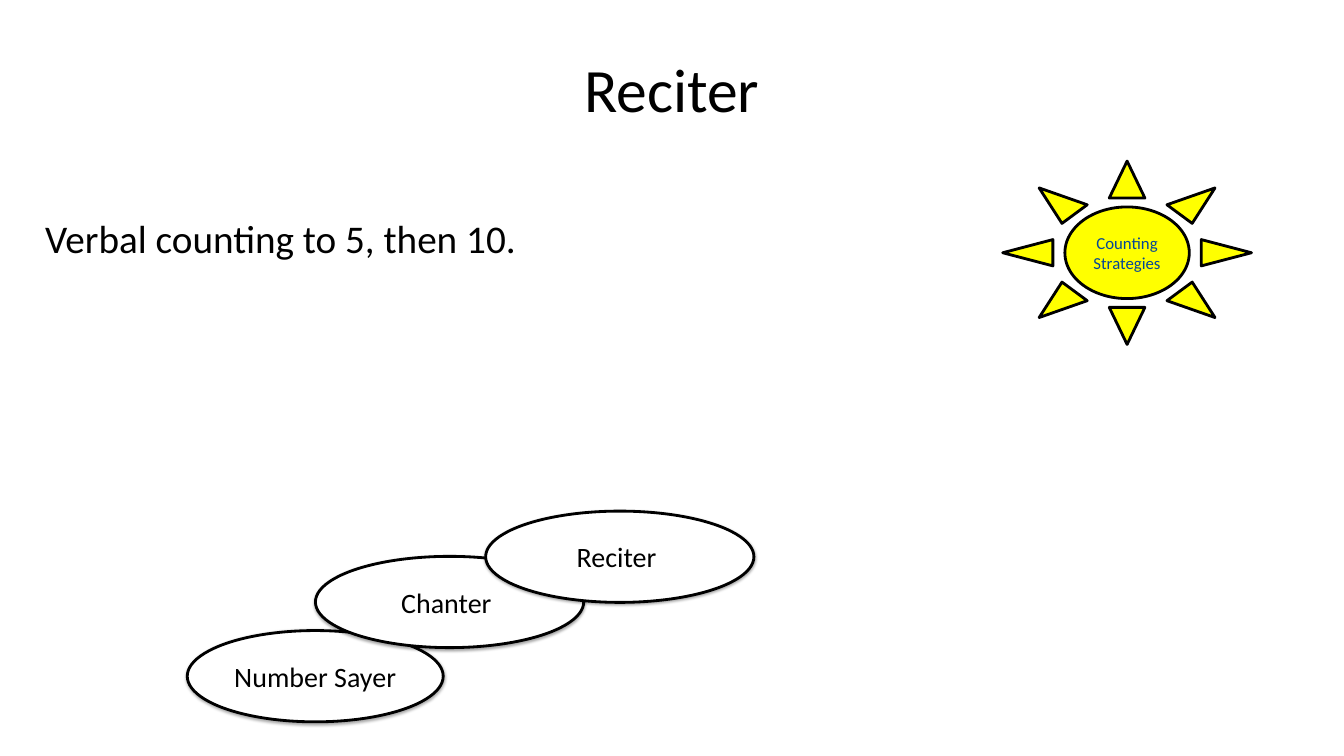
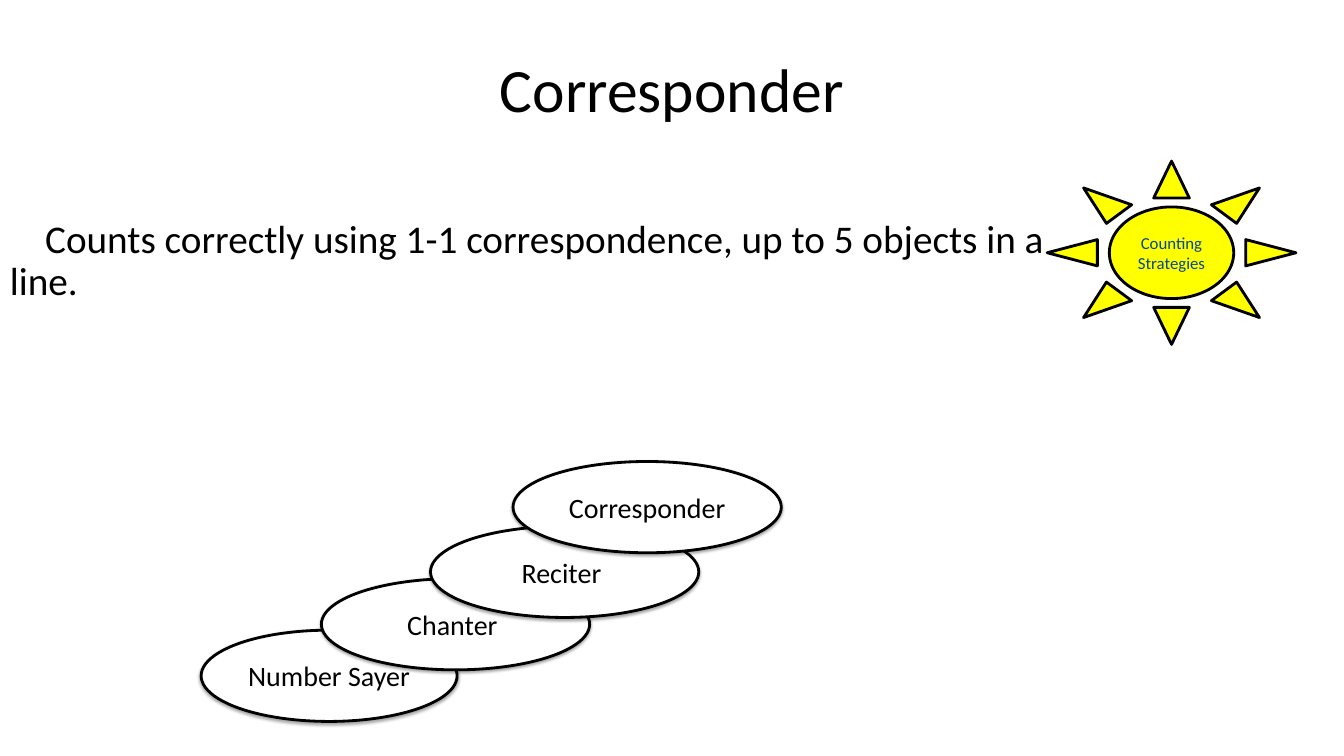
from lxml import etree
from pptx import Presentation
from pptx import util as u
from pptx.dml.color import RGBColor
from pptx.enum import shapes, text
from pptx.oxml.ns import qn

COLOURS = {"ink": "000000", "paper": "FFFFFF", "sun": "FFFF00", "label": "054697"}
FONT = "Calibri"

# Text styles shared by the slides
TITLE = {"size": 44, "colour": "ink", "spacing": 0.9, "inset": 0.25,
         "frame": {"word_wrap": True, "vertical_anchor": text.MSO_ANCHOR.MIDDLE},
         "align": text.PP_ALIGN.CENTER}
BODY = {**TITLE, "size": 28, "align": text.PP_ALIGN.LEFT, "indent": 0.89,
        "frame": {"word_wrap": True, "vertical_anchor": text.MSO_ANCHOR.TOP}}
STAGE = {**TITLE, "size": 20, "spacing": 1.0, "inset": 0.1,
         "frame": {"word_wrap": False, "vertical_anchor": text.MSO_ANCHOR.MIDDLE}}
SUN = {**STAGE, "size": 12, "colour": "label"}

# Per slide: title, body, left edge of the sun, and (name, left, top, width) of each stage
SLIDES = [
    ("Reciter", "Verbal counting to 5, then 10.", 25.27, [
        ("Number Sayer", 4.72, 15.89, 6.45),
        ("Chanter ", 7.95, 14.02, 6.76),
        ("Reciter ", 12.24, 12.88, 6.76)]),
    ("Corresponder",
     "Counts correctly using 1-1 correspondence, up to 5 objects in a line.", 26.39, [
        ("Number Sayer", 5.07, 15.88, 6.45),
        ("Chanter ", 8.1, 14.58, 6.76),
        ("Reciter ", 10.85, 13.26, 6.76),
        ("Corresponder", 12.93, 11.63, 6.76)]),
]


def write(box, lines, style):
    frame = box.text_frame
    for name, value in style["frame"].items():
        setattr(frame, name, value)
    for side in ("left", "right", "top", "bottom"):
        inset = style["inset"] / 2 if side in ("top", "bottom") else style["inset"]
        setattr(frame, f"margin_{side}", u.Cm(inset))
    for number, line in enumerate(lines):
        para = frame.paragraphs[0] if number == 0 else frame.add_paragraph()
        para.alignment = style["align"]
        para.line_spacing = style["spacing"]
        if "indent" in style:
            para._p.get_or_add_pPr().set("indent", str(u.Cm(style["indent"])))
        span = para.add_run()
        span.text = line
        for name, value in {"name": FONT, "size": u.Pt(style["size"])}.items():
            setattr(span.font, name, value)
        span.font.color.rgb = RGBColor.from_string(COLOURS[style["colour"]])


def add_figure(page, kind, place, fill):
    figure = page.shapes.add_shape(kind, *map(u.Cm, place))
    figure.shadow.inherit = False
    figure.fill.solid()
    figure.fill.fore_color.rgb = RGBColor.from_string(COLOURS[fill])
    figure.line.color.rgb = RGBColor.from_string(COLOURS["ink"])
    figure.line.width = u.Pt(2)
    return figure


deck = Presentation()
deck.slide_width, deck.slide_height = u.Cm(33.87), u.Cm(19.05)

for title, body, sun_left, stages in SLIDES:
    page = deck.slides.add_slide(deck.slide_layouts[6])

    # Title and description
    for line, place, style in [(title, (2.33, 1.01, 29.21, 2.66), TITLE),
                               (body, (0, 5.41, 27.25, 11.15), BODY)]:
        write(page.shapes.add_textbox(*map(u.Cm, place)), [line], style)

    # Rising chain of stages, each with a soft shadow below
    for name, left, top, width in stages:
        oval = add_figure(page, shapes.MSO_SHAPE.OVAL, (left, top, width, 2.3), "paper")
        effects = oval._element.spPr.find(qn("a:effectLst"))
        shadow = etree.SubElement(effects, qn("a:outerShdw"), blurRad=str(u.Pt(2)),
                                  dist=str(u.Pt(1)), dir="5400000", rotWithShape="0")
        tint = etree.SubElement(shadow, qn("a:srgbClr"), val=COLOURS["ink"])
        etree.SubElement(tint, qn("a:alpha"), val="35000")
        write(oval, [name], STAGE)

    # Sun badge
    sun = add_figure(page, shapes.MSO_SHAPE.SUN, (sun_left, 4.06, 6.27, 4.62), "sun")
    write(sun, ["Counting", "Strategies"], SUN)

deck.save("out.pptx")
